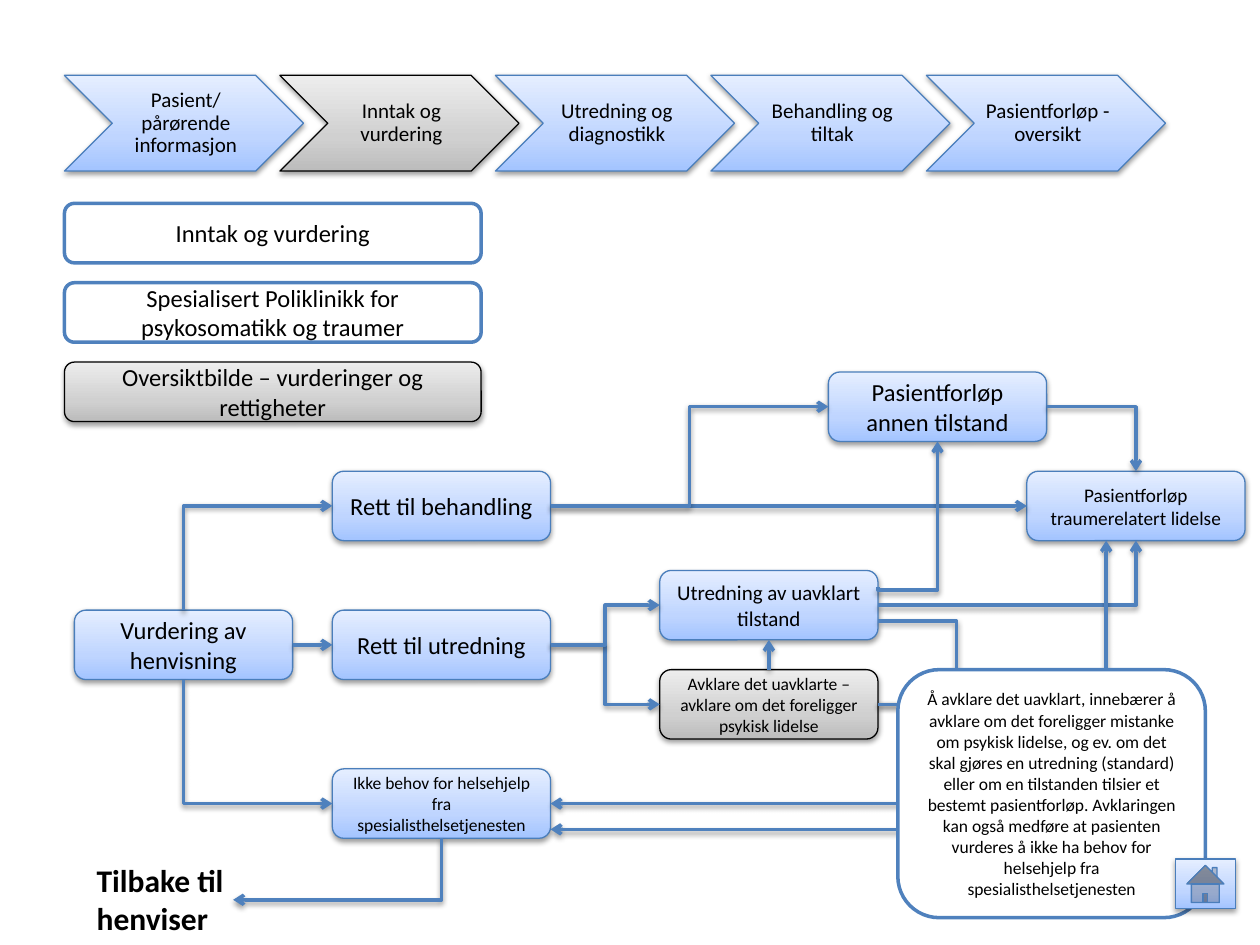
import copy

import pptx
import pptx.dml.color
import pptx.enum.dml
import pptx.enum.shapes
import pptx.enum.text
import pptx.oxml
import pptx.oxml.ns
import pptx.util

UNIT = pptx.util.Cm(0.2)
SHAPE = pptx.enum.shapes.MSO_SHAPE
ALIGN = pptx.enum.text.PP_ALIGN
ANCHOR = pptx.enum.text.MSO_ANCHOR
TOP, LEFT, BOTTOM, RIGHT = range(4)
COLORS = {
    "text": "000000", "paper": "FFFFFF", "accent": "4F81BD", "shadow": "000000",
    "blue_line": "4A7EBB", "blue_low": "A3C4FF", "blue_mid": "BFD5FF", "blue_high": "E5EEFF",
    "gray_line": "000000", "gray_low": "BCBCBC", "gray_mid": "D0D0D0", "gray_high": "EDEDED",
}
NODE_SIZE = (22, 7)
NODES = {
    "referral": (7.5, 61.5, "Vurdering av henvisning", 14, "blue"),
    "no_need": (33.5, 77.5, "Ikke behov for helsehjelp fra spesialisthelsetjenesten", 10, "blue"),
    "assessment": (33.5, 61.5, "Rett til utredning", 14, "blue"),
    "treatment": (33.5, 47.5, "Rett til behandling", 14, "blue"),
    "other": (83.5, 37.5, "Pasientforløp annen tilstand", 14, "blue"),
    "trauma": (103.5, 47.5, "Pasientforløp traumerelatert lidelse", 11, "blue"),
    "unclear": (66.5, 57.5, "Utredning av uavklart tilstand", 12, "blue"),
    "clarify": (66.5, 67.5, "Avklare det uavklarte – avklare om det foreligger psykisk lidelse", 10, "gray"),
}
STEPS = ["Pasient/ pårørende informasjon", "Inntak og vurdering", "Utredning og diagnostikk",
         "Behandling og tiltak", "Pasientforløp - oversikt"]
BANNERS = [("Inntak og vurdering", None),
           ("Spesialisert Poliklinikk for psykosomatikk og traumer", None),
           ("Oversiktbilde – vurderinger og rettigheter", "gray")]
NOTE = ("Å avklare det uavklart, innebærer å avklare om det foreligger mistanke om psykisk lidelse, "
        "og ev. om det skal gjøres en utredning (standard) eller om en tilstanden tilsier et bestemt "
        "pasientforløp. Avklaringen kan også medføre at pasienten vurderes å ikke ha behov for "
        "helsehjelp fra spesialisthelsetjenesten")


def grid(*values):
    """Turn grid units into slide lengths."""
    return [round(value * UNIT) for value in values]


def rgb(name):
    """Look up a named colour."""
    return pptx.dml.color.RGBColor.from_string(COLORS[name])


def child(parent, tag, **attributes):
    """Append a DrawingML element to its parent."""
    element = pptx.oxml.parse_xml(f"<{tag} {pptx.oxml.ns.nsdecls('a')}/>")
    for key, value in attributes.items():
        element.set(key, str(value))
    parent.append(element)
    return element


def cast_shadow(effects):
    """Add a soft shadow below to an effect list."""
    shadow = child(effects, "a:outerShdw", blurRad=40000, dist=20000, dir=5400000, rotWithShape=0)
    color = child(shadow, "a:srgbClr", val=COLORS["shadow"])
    child(color, "a:alpha", val=38000)


def write(shape, text, size=14, bold=False, align=ALIGN.CENTER, anchor=ANCHOR.MIDDLE,
          insets=None, line_spacing=None):
    """Put formatted text in a shape."""
    frame = shape.text_frame
    frame.word_wrap = True
    frame.vertical_anchor = anchor
    if insets:
        frame.margin_left, frame.margin_top, frame.margin_right, frame.margin_bottom = map(
            pptx.util.Inches, insets)
    paragraph = frame.paragraphs[0]
    paragraph.alignment = align
    if line_spacing:
        paragraph.line_spacing = line_spacing
    run = paragraph.add_run()
    run.text = text
    run.font.name = "Calibri"
    run.font.size = pptx.util.Pt(size)
    run.font.bold = bold
    run.font.color.rgb = rgb("text")


def panel(slide, preset, box, tone=None):
    """Draw a shaded panel in a tone, or a white outlined one."""
    shape = slide.shapes.add_shape(preset, *grid(*box))
    shape.shadow.inherit = False
    if tone is None:
        shape.fill.solid()
        shape.fill.fore_color.rgb = rgb("paper")
        shape.line.color.rgb = rgb("accent")
        shape.line.width = pptx.util.Pt(2)
        return shape
    shape.fill.gradient()
    shape.fill.gradient_angle = 90
    properties = shape._element.spPr
    stops = properties.find(".//" + pptx.oxml.ns.qn("a:gsLst"))
    stops.append(copy.deepcopy(stops[-1]))
    for stop, position, level in zip(shape.fill.gradient_stops, (0, 0.35, 1), ("low", "mid", "high")):
        stop.position = position
        stop.color.rgb = rgb(f"{tone}_{level}")
    shape.line.color.rgb = rgb(f"{tone}_line")
    shape.line.width = pptx.util.Pt(0.75)
    cast_shadow(properties.find(pptx.oxml.ns.qn("a:effectLst")))
    return shape


def arrow(slide, kind, points):
    """Draw an accent arrow between two grid points."""
    connector = slide.shapes.add_connector(kind, *grid(*points))
    connector.line.color.rgb = rgb("accent")
    connector.line.width = pptx.util.Pt(2)
    properties = connector._element.spPr
    child(properties.find(pptx.oxml.ns.qn("a:ln")), "a:tailEnd", type="arrow")
    cast_shadow(child(properties, "a:effectLst"))
    return connector


def straight(slide, start, start_side, end, end_side):
    """Join two nodes with a straight arrow."""
    connector = arrow(slide, pptx.enum.shapes.MSO_CONNECTOR.STRAIGHT, (0, 0, 0, 0))
    connector.begin_connect(start, start_side)
    connector.end_connect(end, end_side)


def bent(slide, start, end, vertical=False, bend=None):
    """Draw an elbow arrow; bend is the share of the run before a second corner."""
    connector = arrow(slide, pptx.enum.shapes.MSO_CONNECTOR.ELBOW, start + end)
    dx, dy = end[0] - start[0], end[1] - start[1]
    width, height = (abs(dy), abs(dx)) if vertical else (abs(dx), abs(dy))
    middle_x, middle_y = (start[0] + end[0]) / 2, (start[1] + end[1]) / 2
    connector.left, connector.top, connector.width, connector.height = grid(
        middle_x - width / 2, middle_y - height / 2, width, height)
    flips = (dy < 0, dx > 0) if vertical else (dx < 0, dy < 0)
    properties = connector._element.spPr
    frame = properties.find(pptx.oxml.ns.qn("a:xfrm"))
    frame.set("rot", "5400000" if vertical else "0")
    for key, flipped in zip(("flipH", "flipV"), flips):
        frame.set(key, str(int(flipped)))
    geometry = properties.find(pptx.oxml.ns.qn("a:prstGeom"))
    if bend is None:
        geometry.set("prst", "bentConnector2")
    else:
        guides = geometry.find(pptx.oxml.ns.qn("a:avLst"))
        child(guides, "a:gd", name="adj1", fmla=f"val {round(bend * 100000)}")


def steps(slide, left, top, pitch=21.72, width=24.1, height=9.65):
    """Lay out the chevrons, with the current step in gray."""
    for index, label in enumerate(STEPS):
        tone = "gray" if index == 1 else "blue"
        chevron = panel(slide, SHAPE.CHEVRON, (left + index * pitch, top, width, height), tone)
        write(chevron, label, size=12, insets=(0.05, 0.02, 0.02, 0.02), line_spacing=0.9)


def banners(slide, left, top, width=42, height=6, pitch=8):
    """Stack the heading banners."""
    for index, (label, tone) in enumerate(BANNERS):
        box = (left, top + index * pitch, width, height)
        write(panel(slide, SHAPE.ROUNDED_RECTANGLE, box, tone), label)


def flow(slide):
    """Place the decision nodes and the arrows between them."""
    nodes = {}
    for key, (left, top, label, size, tone) in NODES.items():
        nodes[key] = panel(slide, SHAPE.ROUNDED_RECTANGLE, (left, top, *NODE_SIZE), tone)
        write(nodes[key], label, size=size)

    def at(key, side, dx=0, dy=0):
        """Give a grid point at the middle of a node's side, moved by an offset."""
        across, down = ((0.5, 0), (0, 0.5), (0.5, 1), (1, 0.5))[side]
        left, top = NODES[key][:2]
        return left + across * NODE_SIZE[0] + dx, top + down * NODE_SIZE[1] + dy

    for start, start_side, end, end_side in (
            ("referral", RIGHT, "assessment", LEFT), ("treatment", RIGHT, "trauma", LEFT),
            ("clarify", TOP, "unclear", BOTTOM)):
        straight(slide, nodes[start], start_side, nodes[end], end_side)
    for side, end in ((BOTTOM, "no_need"), (TOP, "treatment")):
        bent(slide, at("referral", side), at(end, LEFT), vertical=True)
    bent(slide, at("no_need", BOTTOM), (23.5, 90.7), vertical=True)
    for start, end in (("assessment", "clarify"), ("assessment", "unclear"), ("treatment", "other")):
        bent(slide, at(start, RIGHT), at(end, LEFT), bend=0.5)
    bent(slide, at("unclear", RIGHT), at("trauma", BOTTOM))
    bent(slide, at("other", RIGHT), at("trauma", TOP))
    bent(slide, at("unclear", RIGHT, dy=-1.8), at("other", BOTTOM), vertical=True, bend=-0.02)
    bent(slide, at("clarify", RIGHT), at("no_need", RIGHT), bend=-0.1)
    bent(slide, at("unclear", RIGHT, dy=1.6), at("no_need", RIGHT, dy=2.6), bend=-0.24)
    bent(slide, at("clarify", RIGHT), at("trauma", BOTTOM, dx=-3), bend=1)


def main():
    """Build the slide and save it."""
    deck = pptx.Presentation()
    deck.slide_width, deck.slide_height = pptx.util.Inches(10), pptx.util.Inches(7.5)
    slide = deck.slides.add_slide(deck.slide_layouts[6])
    flow(slide)
    back_to_referrer = slide.shapes.add_textbox(*grid(8.5, 86.2, 18, 9))
    write(back_to_referrer, "Tilbake til henviser", size=18, bold=True, align=ALIGN.LEFT, anchor=ANCHOR.TOP)
    write(panel(slide, SHAPE.ROUNDED_RECTANGLE, (90.5, 67.5, 31, 25)), NOTE, size=10)
    panel(slide, SHAPE.ACTION_BUTTON_HOME, (118.5, 86.6, 6, 5), "blue")
    steps(slide, 6.5, 7.6)
    banners(slide, 6.5, 20.5)
    deck.save("out.pptx")


if __name__ == "__main__":
    main()
